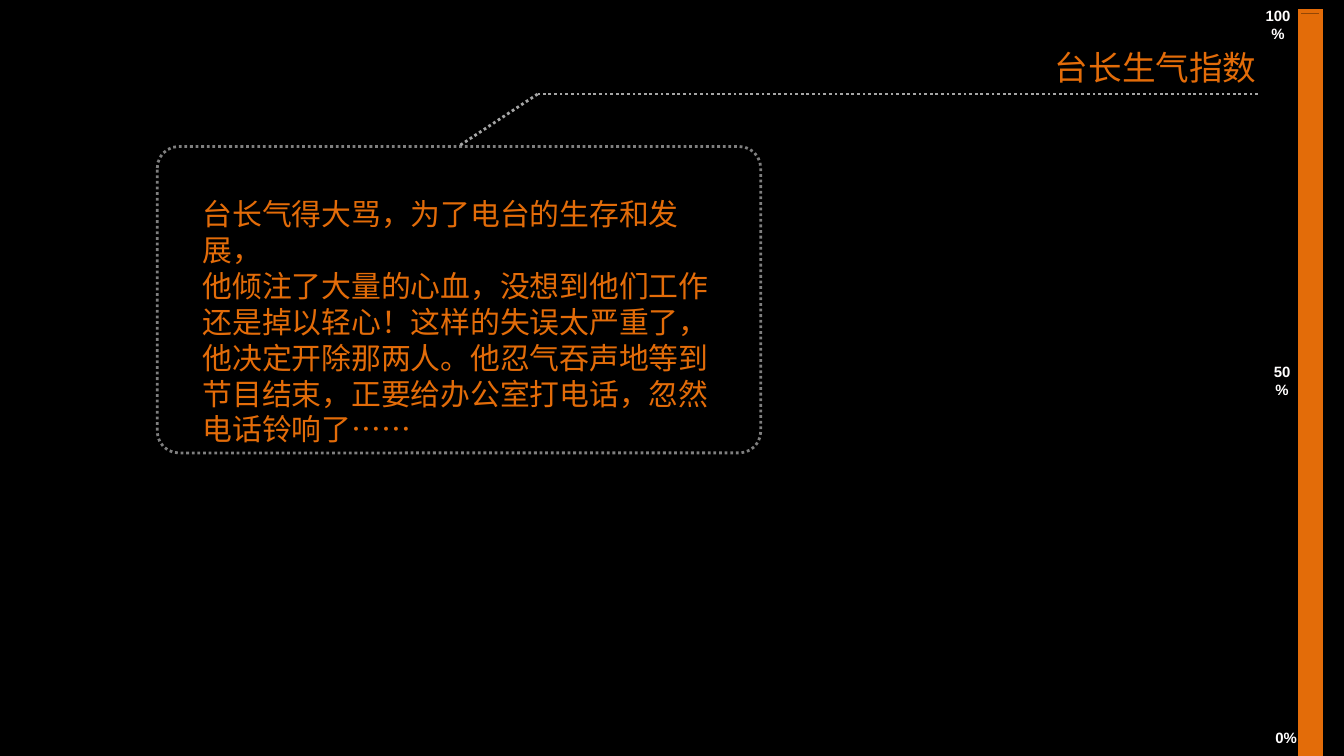
"""Build the slide with the station director's anger gauge and story callout."""
from lxml.etree import SubElement
from pptx import Presentation
from pptx.dml.color import RGBColor
from pptx.enum.dml import MSO_LINE
from pptx.enum.shapes import MSO_CONNECTOR, MSO_SHAPE
from pptx.enum.text import MSO_AUTO_SIZE, PP_ALIGN
from pptx.oxml.ns import qn
from pptx.util import Inches, Pt

BLACK = RGBColor(0x00, 0x00, 0x00)
ORANGE = RGBColor(0xE3, 0x6C, 0x09)
WHITE = RGBColor(0xFF, 0xFE, 0xFE)
GRAY = RGBColor(0x7F, 0x7F, 0x7F)
LIGHT_GRAY = RGBColor(0xA5, 0xA5, 0xA5)

CJK = "Noto Sans CJK SC"
LABEL = {"name": "Arial", "size": Pt(8), "bold": True}
TITLE = {"name": CJK, "size": Pt(18)}
BODY = {"name": CJK, "size": Pt(16)}

SCALE = [
    ("100%", (9.28, 0, 0.46, 0.24), True),
    ("50%", (9.34, 2.65, 0.4, 0.24), True),
    ("0%", (9.39, 5.37, 0.36, 0.24), False),
]
STORY = [
    "台长气得大骂，为了电台的生存和发展，",
    "他倾注了大量的心血，没想到他们工作",
    "还是掉以轻心！这样的失误太严重了，",
    "他决定开除那两人。他忍气吞声地等到",
    "节目结束，正要给办公室打电话，忽然",
    "电话铃响了……",
]
LEADER = [(9.36, 0.7), (4, 0.7), (3.41, 1.09)]


def style_line(line, color, width, dash=None):
    """Set colour, width and dash of a line."""
    line.color.rgb = color
    line.width = Pt(width)
    if dash:
        line.dash_style = dash


def add_box(s, kind, at, fill=None):
    """Add a preset shape, filled without outline or left hollow."""
    sp = s.shapes.add_shape(kind, *map(Inches, at))
    sp.shadow.inherit = False
    if fill is None:
        sp.fill.background()
    else:
        sp.fill.solid()
        sp.fill.fore_color.rgb = fill
        sp.line.fill.background()
    return sp


def add_leader(s, start, end):
    """Add one dotted segment of the leader line."""
    cxn = s.shapes.add_connector(
        MSO_CONNECTOR.STRAIGHT, *map(Inches, (*start, *end)))
    style_line(cxn.line, LIGHT_GRAY, 1.5, MSO_LINE.ROUND_DOT)
    SubElement(cxn._element.spPr, qn("a:effectLst"))


def add_text(s, at, lines, font, color, align=PP_ALIGN.LEFT, wrap=True):
    """Add a text box with one paragraph per line and no hanging marks."""
    tf = s.shapes.add_textbox(*map(Inches, at)).text_frame
    tf.word_wrap = wrap
    tf.auto_size = MSO_AUTO_SIZE.SHAPE_TO_FIT_TEXT
    for i, text in enumerate(lines):
        p = tf.add_paragraph() if i else tf.paragraphs[0]
        p.alignment = align
        p._p.get_or_add_pPr().set("hangingPunct", "0")
        r = p.add_run()
        r.text = text
        for key, value in font.items():
            setattr(r.font, key, value)
        r.font.color.rgb = color
        SubElement(r._r.get_or_add_rPr(), qn("a:ea"), typeface=font["name"])


def add_gauge(s):
    """Add the full gauge with its square frame and percentage labels."""
    frame = add_box(s, MSO_SHAPE.RECTANGLE, (9.67, 0.08, 0.16, 5.75))
    style_line(frame.line, ORANGE, 2)
    SubElement(frame._element.spPr.find(qn("a:ln")), qn("a:miter"),
               lim="800000")
    for text, at, wrap in SCALE:
        add_text(s, at, [text], LABEL, WHITE, PP_ALIGN.CENTER, wrap)
    add_box(s, MSO_SHAPE.RECTANGLE, (9.67, 0.1, 0.16, 5.65), ORANGE)


def add_callout(s):
    """Add the dotted callout, its leader line and the story."""
    frame = add_box(s, MSO_SHAPE.ROUNDED_RECTANGLE, (1.17, 1.09, 4.49, 2.28))
    frame.adjustments[0] = 0.07
    style_line(frame.line, GRAY, 1.5, MSO_LINE.ROUND_DOT)
    for start, end in zip(LEADER, LEADER[1:]):
        add_leader(s, start, end)
    add_text(s, (1.41, 1.41, 4.03, 1.72), STORY, BODY, ORANGE)


def main():
    """Build and save the slide."""
    prs = Presentation()
    prs.slide_width, prs.slide_height = Inches(10), Inches(10) * 9 // 16
    s = prs.slides.add_slide(prs.slide_layouts[6])
    s.background.fill.solid()
    s.background.fill.fore_color.rgb = BLACK
    add_gauge(s)
    add_text(s, (7.6, 0.3, 2, 0.4), ["台长生气指数"], TITLE, ORANGE,
             PP_ALIGN.CENTER)
    add_callout(s)
    prs.save("out.pptx")


if __name__ == "__main__":
    main()
